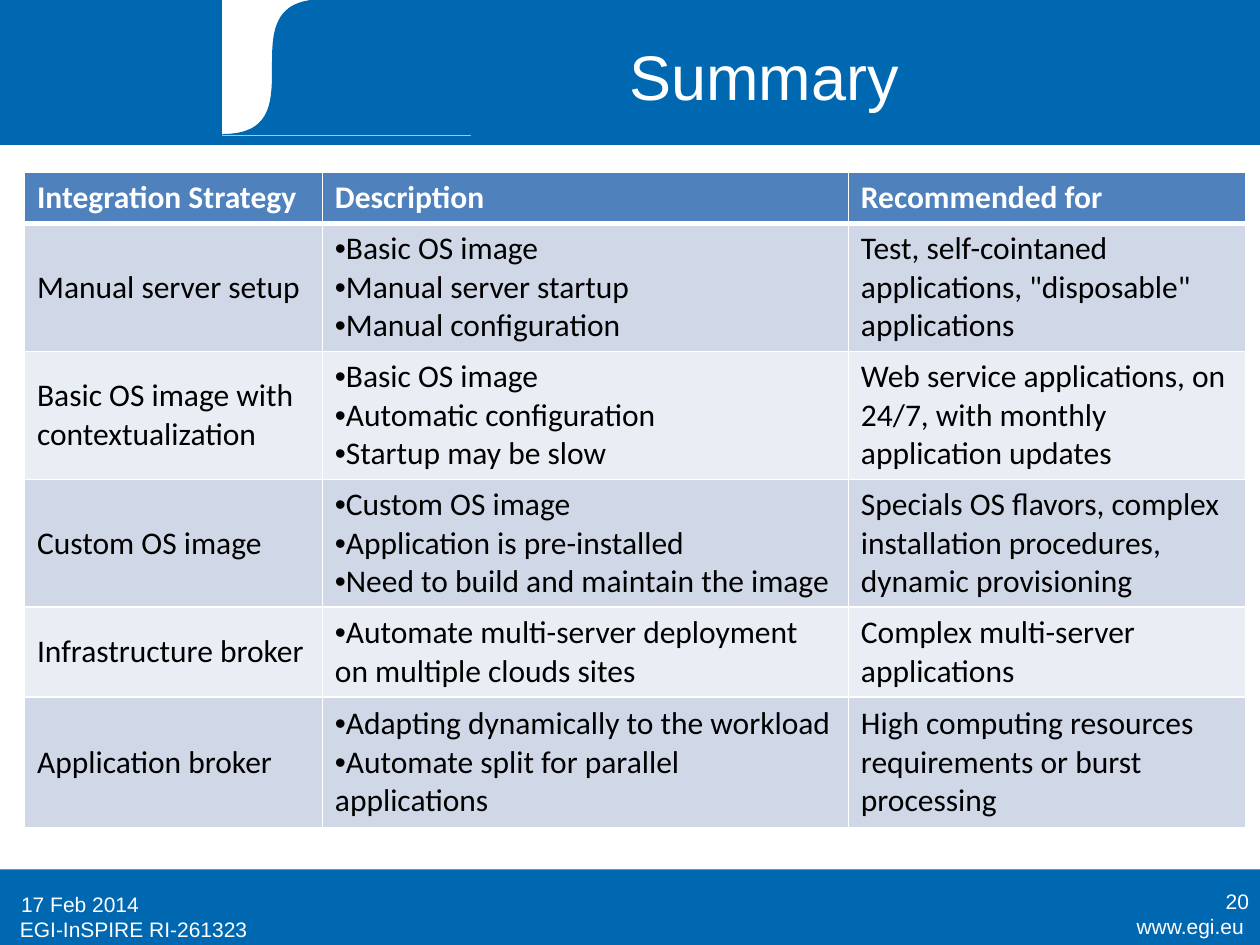
from lxml import etree
from pptx import Presentation
from pptx.dml.color import RGBColor
from pptx.enum.shapes import MSO_SHAPE
from pptx.enum.text import MSO_ANCHOR, PP_ALIGN
from pptx.oxml.ns import qn
from pptx.util import Pt

RECT = MSO_SHAPE.RECTANGLE
MIDDLE = MSO_ANCHOR.MIDDLE
LEFT, CENTER, RIGHT = PP_ALIGN.LEFT, PP_ALIGN.CENTER, PP_ALIGN.RIGHT
COLORS = {
    "blue": "0067B1", "white": "FFFFFF", "black": "000000",
    "header": "4F81BD", "odd": "D0D8E8", "even": "E9EDF4",
}
RGB = {name: RGBColor.from_string(value) for name, value in COLORS.items()}


def paint(sp, color, line=True):
    sp.shadow.inherit = False
    sp.fill.solid()
    sp.fill.fore_color.rgb = RGB[color]
    if line:
        sp.line.color.rgb = RGB[color]
        sp.line.width = Pt(0.75)
    else:
        sp.line.fill.background()


def write(p, text, color, **fmt):
    r = p.add_run()
    r.text = text
    for key, value in fmt.items():
        setattr(r.font, key, value)
    r.font.color.rgb = RGB[color]


prs = Presentation()
prs.slide_width, prs.slide_height = Pt(720), Pt(540)
s = prs.slides.add_slide(prs.slide_layouts[5])

for x, y, w, h, color, line in [
    (0, 496.8, 720, 43.2, "blue", False),
    (0, 0, 720, 82.4, "blue", True),
    (127.4, 0, 141.4, 77.2, "white", True),
]:
    paint(s.shapes.add_shape(RECT, Pt(x), Pt(y), Pt(w), Pt(h)), color, line)

left, right, bottom, curve_end = 127.4, 269.2, 77, 184.3
points = [(left, bottom)]
for i in range(1, 41):
    t = i / 40
    x = (left * ((1 - t) ** 3 + 3 * (1 - t) * t ** 2)
         + curve_end * (3 * (1 - t) ** 2 * t + t ** 3))
    y = bottom * ((1 - t) ** 3 + 3 * (1 - t) ** 2 * t)
    points.append((x, y))
points.append((right, 0))
fb = s.shapes.build_freeform(Pt(right), Pt(bottom))
fb.add_line_segments([(Pt(x), Pt(y)) for x, y in points], close=True)
paint(fb.convert_to_shape(), "blue")

title = s.shapes.title
title.element.getparent().append(title.element)
title.left, title.top, title.width, title.height = Pt(167.3), Pt(9), Pt(538.6), Pt(68.4)
tf = title.text_frame
tf.vertical_anchor = MIDDLE
p = tf.paragraphs[0]
p.alignment = CENTER
write(p, "Summary", "white", name="Arial", size=Pt(36))

rows = [
    ("Integration Strategy", ["Description"], "Recommended for"),
    ("Manual server setup",
     ["Basic OS image", "Manual server startup", "Manual configuration"],
     'Test, self-cointaned applications, "disposable" applications'),
    ("Basic OS image with contextualization",
     ["Basic OS image", "Automatic configuration", "Startup may be slow"],
     "Web service applications, on 24/7, with monthly application updates"),
    ("Custom OS image",
     ["Custom OS image", "Application is pre-installed",
      "Need to build and maintain the image"],
     "Specials OS flavors, complex installation procedures, dynamic provisioning"),
    ("Infrastructure broker",
     ["Automate multi-server deployment on multiple clouds sites"],
     "Complex multi-server applications"),
    ("Application broker",
     ["Adapting dynamically to the workload",
      "Automate split for parallel applications"],
     "High computing resources requirements or burst processing"),
]
widths = [170.2, 300.6, 226.8]
heights = [28, 73.1, 73.1, 73.1, 51, 74.9]
table = s.shapes.add_table(len(rows), len(widths), Pt(14), Pt(98.4),
                           Pt(sum(widths)), Pt(sum(heights))).table
for col, w in zip(table.columns, widths):
    col.width = Pt(w)
for row, h in zip(table.rows, heights):
    row.height = Pt(h)

for i, (strategy, description, use) in enumerate(rows):
    header = i == 0
    fill = "header" if header else ("odd" if i % 2 else "even")
    for j, lines in enumerate([[strategy], description, [use]]):
        cell = table.cell(i, j)
        cell.vertical_anchor = MIDDLE
        tcPr = cell._tc.get_or_add_tcPr()
        for side in "LRTB":
            thick = (header and side == "B") or (i == 1 and side == "T")
            ln = etree.SubElement(tcPr, qn("a:ln" + side), w=str(Pt(3 if thick else 1)))
            solid = etree.SubElement(ln, qn("a:solidFill"))
            etree.SubElement(solid, qn("a:srgbClr"), val=COLORS["white"])
        cell.fill.solid()
        cell.fill.fore_color.rgb = RGB[fill]
        tf = cell.text_frame
        for k, text in enumerate(lines):
            p = tf.add_paragraph() if k else tf.paragraphs[0]
            if j == 1 and not header:
                pPr = p._p.get_or_add_pPr()
                etree.SubElement(pPr, qn("a:buFont"), typeface="Arial")
                etree.SubElement(pPr, qn("a:buChar"), char="•")
            write(p, text, "white" if header else "black",
                  name="Calibri", size=Pt(18), bold=header)

for text, x, y, w, h, align in [
    ("www.egi.eu", 604.1, 518, 113.8, 22.3, RIGHT),
    ("EGI-InSPIRE RI-261323", 4.3, 519.8, 180, 22.3, LEFT),
    ("17 Feb 2014", 5, 502.2, 167.8, 28.8, LEFT),
    ("20", 553, 500.4, 167.8, 28.8, RIGHT),
]:
    tf = s.shapes.add_textbox(Pt(x), Pt(y), Pt(w), Pt(h)).text_frame
    tf.word_wrap = True
    tf.vertical_anchor = MIDDLE
    p = tf.paragraphs[0]
    p.alignment = align
    write(p, text, "white", name="Arial", size=Pt(12))

prs.save("out.pptx")
